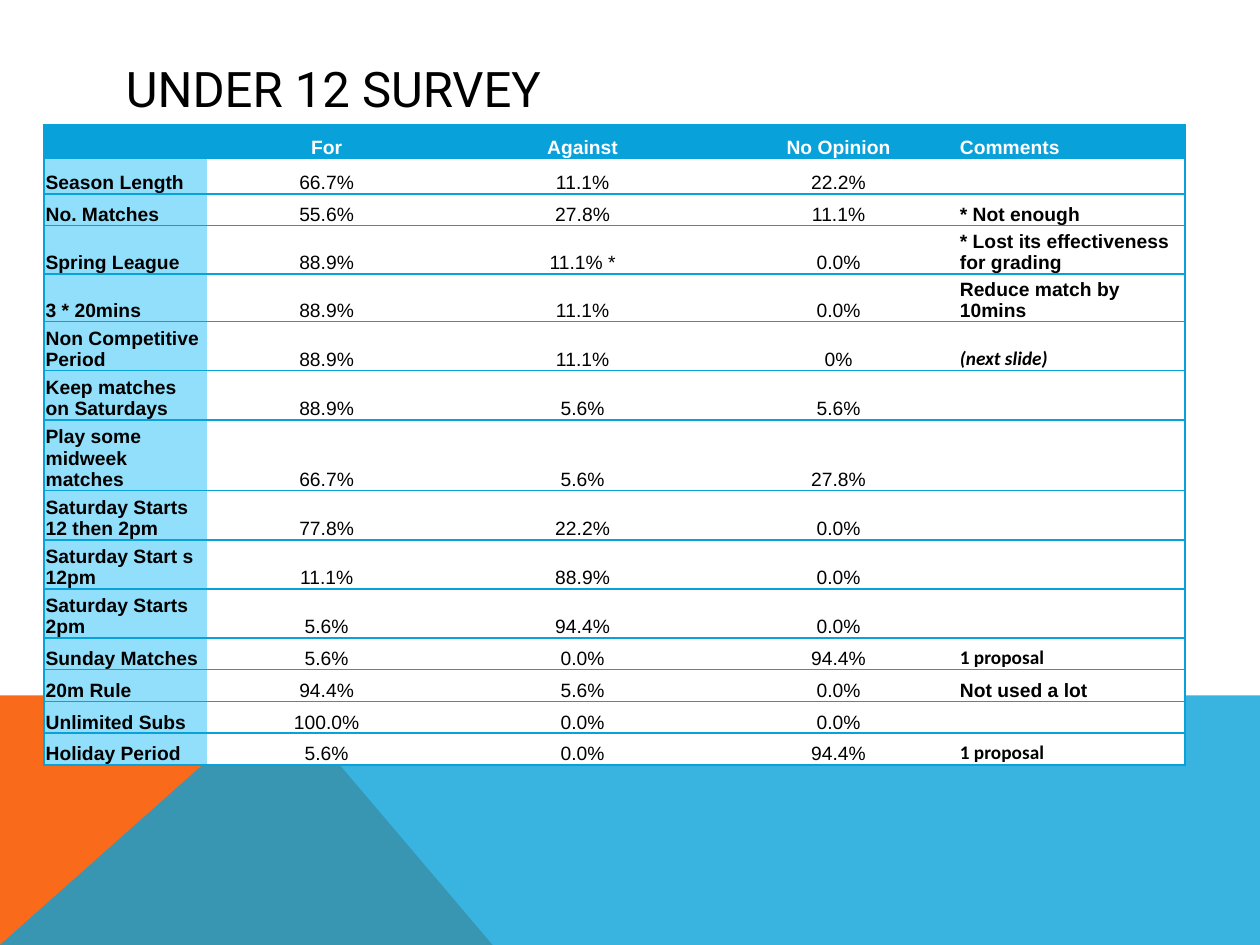
from dataclasses import dataclass

from lxml.etree import SubElement
from pptx import Presentation
from pptx.dml.color import RGBColor
from pptx.enum.text import MSO_ANCHOR, PP_ALIGN
from pptx.oxml.ns import qn
from pptx.util import Cm, Pt


@dataclass(frozen=True)
class Theme:
    blue: str = "08A1D9"
    pale_blue: str = "91DFFB"
    orange: str = "F96A1B"
    white: str = "FFFFFF"
    black: str = "000000"
    heading_font: str = "Roboto"
    body_font: str = "Arial"
    remark_font: str = "Calibri"
    heading_size: int = 28
    body_size: int = 11
    rule_width: int = 1
    no_table_style: str = "{2D5ABB26-0587-4C30-8999-92F81FD0307C}"


THEME = Theme()
PAGE_WIDTH, PAGE_HEIGHT = 25.4, 19.05
HORIZON = 14.02
PEAK = 5.66

COLUMN_WIDTHS = [3.28, 4.83, 5.49, 4.83, 4.57]
ROW_HEIGHTS = [0.69, 0.71, 0.64, 0.97, 0.79, 0.99, 0.99, 1.02] + [0.99] * 3 + [0.64] * 4
SURVEY = [
    ("", "For", "Against", "No Opinion", "Comments"),
    ("Season Length", "66.7%", "11.1%", "22.2%", ""),
    ("No. Matches", "55.6%", "27.8%", "11.1%", "* Not enough"),
    ("Spring League", "88.9%", "11.1% *", "0.0%", "* Lost its effectiveness for grading"),
    ("3 * 20mins", "88.9%", "11.1%", "0.0%", "Reduce match by 10mins"),
    ("Non Competitive Period", "88.9%", "11.1%", "0%", "(next slide)"),
    ("Keep matches on Saturdays", "88.9%", "5.6%", "5.6%", ""),
    ("Play some midweek matches", "66.7%", "5.6%", "27.8%", ""),
    ("Saturday Starts\n12 then 2pm", "77.8%", "22.2%", "0.0%", ""),
    ("Saturday Start s\n12pm", "11.1%", "88.9%", "0.0%", ""),
    ("Saturday Starts\n2pm", "5.6%", "94.4%", "0.0%", ""),
    ("Sunday Matches", "5.6%", "0.0%", "94.4%", "1 proposal"),
    ("20m Rule", "94.4%", "5.6%", "0.0%", "Not used a lot"),
    ("Unlimited Subs", "100.0%", "0.0%", "0.0%", ""),
    ("Holiday Period", "5.6%", "0.0%", "94.4%", "1 proposal"),
]
REMARKS = {"(next slide)", "1 proposal"}


def write(frame, text, font, size, color, bold=False, italic=False, align=PP_ALIGN.LEFT):
    frame.text = text
    frame.word_wrap = True
    for paragraph in frame.paragraphs:
        paragraph.alignment = align
        for run in paragraph.runs:
            run.font.name = font
            run.font.size = Pt(size)
            run.font.bold = bold
            run.font.italic = italic
            run.font.color.rgb = RGBColor.from_string(color)
        if not paragraph.runs:
            SubElement(paragraph._p, qn("a:endParaRPr"), sz=str(size * 100))


def paint(fill, color):
    fill.solid()
    fill.fore_color.rgb = RGBColor.from_string(color)


class SlideBuilder:
    def __init__(self, slide, theme):
        self.slide = slide
        self.theme = theme

    def polygon(self, points, color, opacity=100):
        start, *others = [(Cm(x), Cm(y)) for x, y in points]
        outline = self.slide.shapes.build_freeform(*start)
        outline.add_line_segments(others, close=True)
        shape = outline.convert_to_shape()
        shape.shadow.inherit = False
        shape.line.fill.background()
        paint(shape.fill, color)
        if opacity < 100:
            tint = shape._element.spPr.find(qn("a:solidFill"))[0]
            SubElement(tint, qn("a:alpha"), val=str(opacity * 1000))

    def heading(self, text, left, top, width, height):
        box = self.slide.shapes.add_textbox(Cm(left), Cm(top), Cm(width), Cm(height))
        box.text_frame.vertical_anchor = MSO_ANCHOR.MIDDLE
        write(box.text_frame, text, self.theme.heading_font, self.theme.heading_size, self.theme.black)

    def rule(self, cell, side):
        line = SubElement(cell._tc.get_or_add_tcPr(), qn(f"a:ln{side}"), w=str(Pt(self.theme.rule_width)))
        SubElement(SubElement(line, qn("a:solidFill")), qn("a:srgbClr"), val=self.theme.blue)

    def survey_cell(self, cell, text, is_header, is_label, is_comment):
        theme = self.theme
        cell.margin_left = cell.margin_right = cell.margin_top = Cm(0.03)
        cell.margin_bottom = 0
        cell.vertical_anchor = MSO_ANCHOR.BOTTOM
        if is_label:
            self.rule(cell, "L")
        if is_comment:
            self.rule(cell, "R")
        self.rule(cell, "T")
        self.rule(cell, "B")
        paint(cell.fill, theme.blue if is_header else theme.pale_blue if is_label else theme.white)
        write(
            cell.text_frame,
            text,
            font=theme.remark_font if text in REMARKS else theme.body_font,
            size=theme.body_size,
            color=theme.white if is_header else theme.black,
            bold=is_header or is_label or is_comment,
            italic=text == "(next slide)",
            align=PP_ALIGN.LEFT if is_label or is_comment else PP_ALIGN.CENTER,
        )

    def survey_table(self, rows, left, top, widths, heights):
        frame = self.slide.shapes.add_table(
            len(rows), len(widths), Cm(left), Cm(top), Cm(sum(widths)), Cm(sum(heights))
        )
        table = frame.table
        table.horz_banding = False
        table._tbl.tblPr.find(qn("a:tableStyleId")).text = self.theme.no_table_style
        for column, width in zip(table.columns, widths):
            column.width = Cm(width)
        for row, height in zip(table.rows, heights):
            row.height = Cm(height)
        last = len(widths) - 1
        for r, answers in enumerate(rows):
            for c, text in enumerate(answers):
                self.survey_cell(table.cell(r, c), text, r == 0, c == 0, c == last)


def main():
    deck = Presentation()
    deck.slide_width, deck.slide_height = Cm(PAGE_WIDTH), Cm(PAGE_HEIGHT)
    builder = SlideBuilder(deck.slides.add_slide(deck.slide_layouts[6]), THEME)
    builder.polygon([(0, PAGE_HEIGHT), (0, HORIZON), (PEAK, HORIZON), (9.93, PAGE_HEIGHT)], THEME.orange)
    builder.polygon(
        [(0, PAGE_HEIGHT), (PEAK, HORIZON), (PAGE_WIDTH, HORIZON), (PAGE_WIDTH, PAGE_HEIGHT)],
        THEME.blue,
        opacity=80,
    )
    builder.heading("UNDER 12 SURVEY", 2.29, 1.02, 20.88, 1.52)
    builder.survey_table(SURVEY, 0.89, 2.51, COLUMN_WIDTHS, ROW_HEIGHTS)
    deck.save("out.pptx")


if __name__ == "__main__":
    main()
